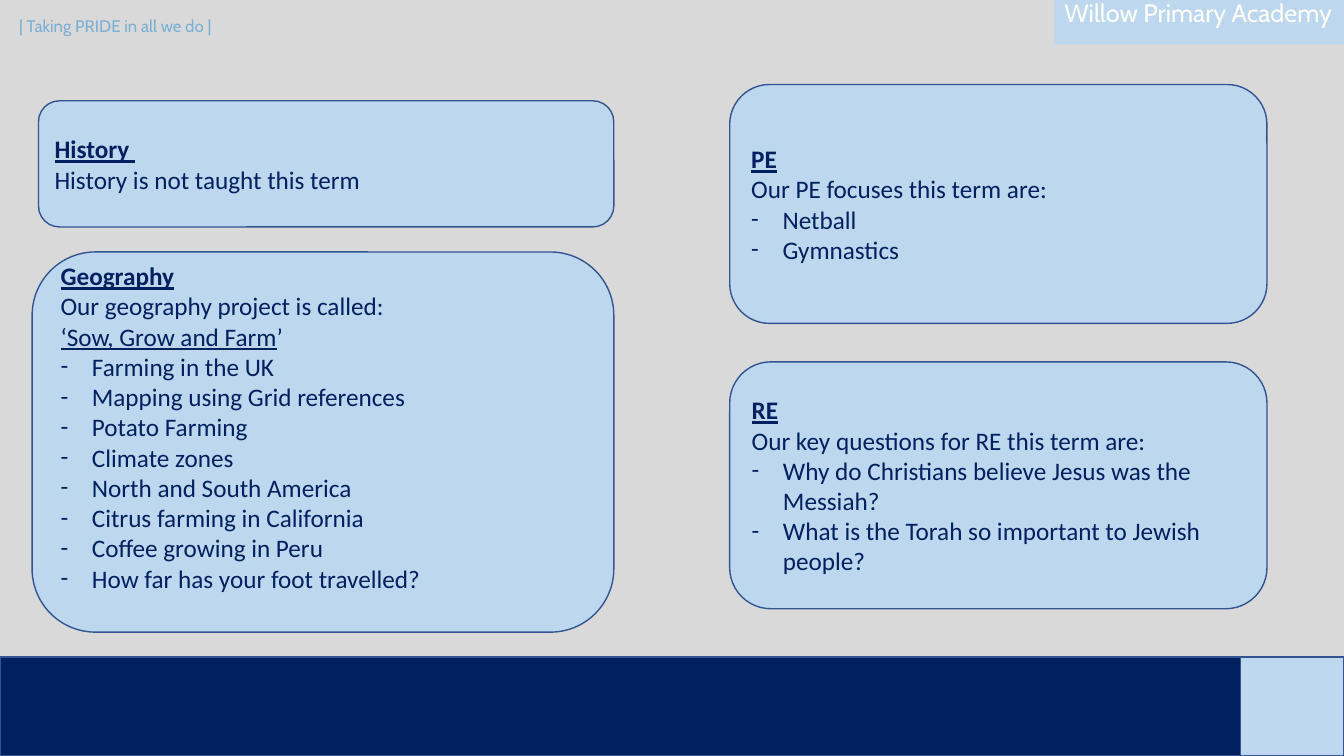
from pptx import Presentation
from pptx.dml.color import RGBColor
from pptx.enum import shapes, text
from pptx.oxml import ns
from pptx.util import Cm, Pt
from lxml import etree

GREY = RGBColor(0xD9, 0xD9, 0xD9)
NAVY = RGBColor(0x00, 0x20, 0x60)
PALE_BLUE = RGBColor(0xBD, 0xD7, 0xEE)
OUTLINE = RGBColor(0x32, 0x54, 0x91)
SKY = RGBColor(0x7B, 0xAF, 0xD4)
WHITE = RGBColor(0xFF, 0xFF, 0xFF)

WIDTH, HEIGHT = Cm(33.87), Cm(19.05)
FOOTER_TOP = Cm(16.56)
INDENT = Cm(0.79)
TEXT_SIZE = Pt(18)

# Each subject: left, top, width, height in cm, heading, intro lines, list items.
# An intro line is a list of (words, underlined) pieces.
SUBJECTS = [
    (18.39, 2.13, 13.54, 6.02, "PE",
     [[("Our PE focuses this term are:", False)]],
     ["Netball", "Gymnastics"]),
    (18.39, 9.12, 13.54, 6.22, "RE",
     [[("Our key questions for RE this term are:", False)]],
     ["Why do Christians believe Jesus was the Messiah?",
      "What is the Torah so important to Jewish people?"]),
    (0.81, 6.35, 14.66, 9.58, "Geography",
     [[("Our geography project is called:", False)],
      [("‘Sow, Grow and Farm", True), ("’", False)]],
     ["Farming in the UK", "Mapping using Grid references", "Potato Farming",
      "Climate zones", "North and South America",
      "Citrus farming in California", "Coffee growing in Peru",
      "How far has your foot travelled?"]),
    (0.97, 2.54, 14.5, 3.18, "History ",
     [[("History is not taught this term", False)]], []),
]


def add_panel(page, kind, left, top, width, height, fill):
    panel = page.shapes.add_shape(kind, left, top, width, height)
    panel.shadow.inherit = False
    panel.fill.solid()
    panel.fill.fore_color.rgb = fill
    panel.line.color.rgb = OUTLINE
    panel.line.width = Pt(1)
    return panel


def style(font, name, size, colour):
    font.name = name
    font.size = size
    font.color.rgb = colour


def write_line(para, pieces, bold=False):
    para.alignment = text.PP_ALIGN.LEFT
    for words, underlined in pieces:
        span = para.add_run()
        span.text = words
        style(span.font, "Calibri", TEXT_SIZE, NAVY)
        span.font.bold = bold
        span.font.underline = underlined


def add_dash(para):
    properties = para._p.get_or_add_pPr()
    properties.set("marL", str(INDENT))
    properties.set("indent", str(-INDENT))
    font = etree.SubElement(properties, ns.qn("a:buFont"))
    font.set("typeface", "Calibri")
    bullet = etree.SubElement(properties, ns.qn("a:buChar"))
    bullet.set("char", "-")


def add_subject(page, left, top, width, height, heading, intro, items):
    box = add_panel(page, shapes.MSO_SHAPE.ROUNDED_RECTANGLE,
                    Cm(left), Cm(top), Cm(width), Cm(height), PALE_BLUE)
    frame = box.text_frame
    frame.word_wrap = True
    frame.vertical_anchor = text.MSO_ANCHOR.MIDDLE
    write_line(frame.paragraphs[0], [(heading, True)], bold=True)
    for pieces in intro:
        write_line(frame.add_paragraph(), pieces)
    for item in items:
        para = frame.add_paragraph()
        add_dash(para)
        write_line(para, [(item, False)])
    return box


def write_label(box, words, size, colour):
    frame = box.text_frame
    frame.text = words
    frame.word_wrap = True
    frame.auto_size = text.MSO_AUTO_SIZE.NONE
    frame.vertical_anchor = text.MSO_ANCHOR.MIDDLE
    para = frame.paragraphs[0]
    para.alignment = text.PP_ALIGN.LEFT
    style(para.runs[0].font, "Cabin", size, colour)


def add_footer(page):
    corner = Cm(31.27)
    for left, right, fill in [(0, WIDTH, NAVY), (corner, WIDTH, PALE_BLUE)]:
        add_panel(page, shapes.MSO_SHAPE.RECTANGLE, left, FOOTER_TOP,
                  right - left, HEIGHT - FOOTER_TOP, fill)


def add_header(page):
    motto = page.shapes.add_textbox(Cm(0.23), Cm(0.15), Cm(6.71), Cm(1.02))
    write_label(motto, "| Taking PRIDE in all we do |", Pt(12), SKY)

    school = page.shapes.title
    school.left, school.top = Cm(26.57), Cm(0)
    school.width, school.height = Cm(7.3), Cm(1.12)
    school.fill.solid()
    school.fill.fore_color.rgb = PALE_BLUE
    write_label(school, "Willow Primary Academy", Pt(18), WHITE)
    frame = school.text_frame
    frame.margin_top, frame.margin_bottom = Cm(0), Cm(0.5)
    frame.margin_right = Cm(0.1)


def main():
    deck = Presentation()
    deck.slide_width, deck.slide_height = WIDTH, HEIGHT
    page = deck.slides.add_slide(deck.slide_layouts.get_by_name("Title Only"))
    page.background.fill.solid()
    page.background.fill.fore_color.rgb = GREY

    add_footer(page)
    add_header(page)
    boxes = {subject[4]: add_subject(page, *subject) for subject in SUBJECTS}
    boxes["Geography"].text_frame.margin_bottom = Cm(0.89)
    deck.save("out.pptx")


if __name__ == "__main__":
    main()
